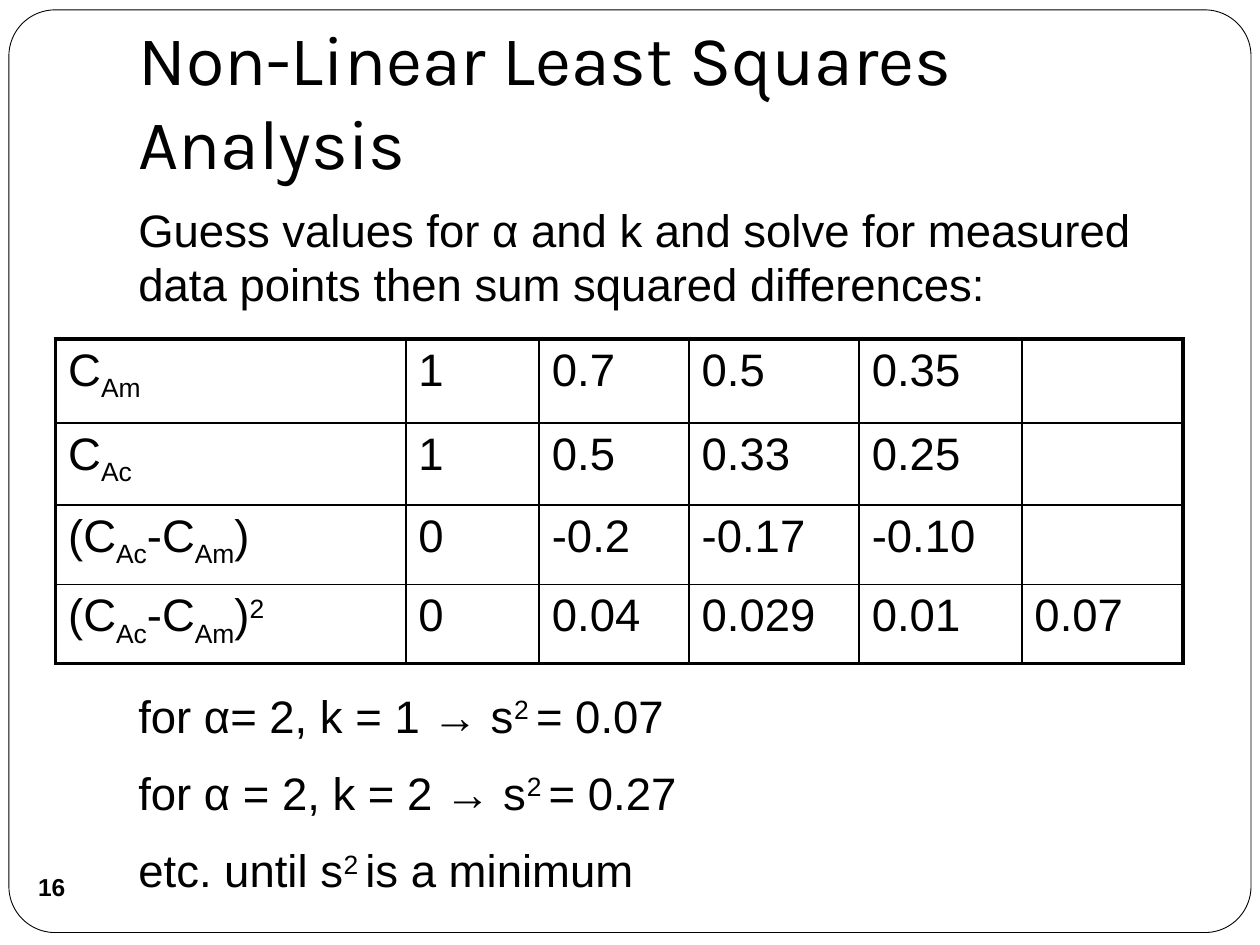
"""Build the slide on non-linear least squares analysis."""
from dataclasses import dataclass

import lxml.etree
import pptx
import pptx.dml.color
import pptx.enum.shapes
import pptx.enum.text
import pptx.oxml.ns
import pptx.util

Cm = pptx.util.Cm
Pt = pptx.util.Pt
Anchor = pptx.enum.text.MSO_ANCHOR
Align = pptx.enum.text.PP_ALIGN
Shape = pptx.enum.shapes.MSO_SHAPE


@dataclass(frozen=True)
class Theme:
    ink: str = "000000"
    paper: str = "FFFFFF"
    title_font: str = "Karla"
    body_font: str = "Arial"
    title_size: float = 40
    body_size: float = 26
    number_size: float = 14
    frame_line: float = 0.5
    inner_line: float = 1
    outer_line: float = 2.25


THEME = Theme()
BASELINES = {"_": "-25000", "^": "30000"}
COLUMN_WIDTHS = (7.06, 2.69, 3.02, 3.43, 3.28, 3.25)
ROW_HEIGHTS = (1.7, 1.65, 1.6, 1.6)
ROWS = (
    ("C|_Am", "1", "0.7", "0.5", "0.35", ""),
    ("C|_Ac", "1", "0.5", "0.33", "0.25", ""),
    ("(C|_Ac|-C|_Am|)", "0", "-0.2", "-0.17", "-0.10", ""),
    ("(C|_Ac|-C|_Am|)|^2", "0", "0.04", "0.029", "0.01", "0.07"),
)
INTRO = (
    "Guess values for α and k and solve for measured data points "
    "then sum squared differences:",
)
RESULTS = (
    "for α= 2, k = 1 → s|^2 |= 0.07",
    "for α = 2, k = 2 → s|^2 |= 0.27",
    "etc. until s|^2 |is a minimum",
)


def color(code):
    return pptx.dml.color.RGBColor.from_string(code)


def write(para, markup, size=THEME.body_size, font=THEME.body_font, before=0):
    """Write text split by | into spans, where _ lowers and ^ raises a span."""
    para.font.size = Pt(size)
    para.font.name = font
    para.font.color.rgb = color(THEME.ink)
    para.space_before = Pt(before)
    for part in filter(None, markup.split("|")):
        span = para.add_run()
        span.text = part.lstrip("_^")
        if part[0] in BASELINES:
            span.font._element.set("baseline", BASELINES[part[0]])


def add_text(page, box_place, lines, **style):
    box = page.shapes.add_textbox(*map(Cm, box_place))
    frame = box.text_frame
    frame.word_wrap = True
    for index, line in enumerate(lines):
        para = frame.add_paragraph() if index else frame.paragraphs[0]
        write(para, line, **style)
    return frame


def add_frame(page):
    box = page.shapes.add_shape(
        Shape.ROUNDED_RECTANGLE, Cm(0.18), Cm(0.2), Cm(25.04), Cm(18.6)
    )
    box.adjustments[0] = 0.05
    box.shadow.inherit = False
    box.fill.solid()
    box.fill.fore_color.rgb = color(THEME.paper)
    box.line.color.rgb = color(THEME.ink)
    box.line.width = Pt(THEME.frame_line)


def set_borders(cell, outer_sides):
    """Draw all four borders, heavier on the outer sides of the table."""
    properties = cell._tc.get_or_add_tcPr()
    qn = pptx.oxml.ns.qn
    for side in "LRTB":
        width = THEME.outer_line if side in outer_sides else THEME.inner_line
        line = lxml.etree.SubElement(properties, qn(f"a:ln{side}"), w=str(Pt(width)))
        fill = lxml.etree.SubElement(line, qn("a:solidFill"))
        lxml.etree.SubElement(fill, qn("a:srgbClr"), val=THEME.ink)


def add_data_table(page):
    last_row, last_column = len(ROWS) - 1, len(COLUMN_WIDTHS) - 1
    table = page.shapes.add_table(
        len(ROWS), len(COLUMN_WIDTHS), Cm(1.12), Cm(6.83),
        Cm(sum(COLUMN_WIDTHS)), Cm(sum(ROW_HEIGHTS)),
    ).table
    table.first_row = table.horz_banding = False
    for column, width in zip(table.columns, COLUMN_WIDTHS):
        column.width = Cm(width)
    for row, height in zip(table.rows, ROW_HEIGHTS):
        row.height = Cm(height)
    for r, values in enumerate(ROWS):
        for c, value in enumerate(values):
            cell = table.cell(r, c)
            edges = {"T": r == 0, "B": r == last_row, "L": c == 0, "R": c == last_column}
            set_borders(cell, [side for side, outer in edges.items() if outer])
            cell.fill.background()
            write(cell.text_frame.paragraphs[0], value)


def add_page_number(page, number):
    box = page.shapes.add_shape(Shape.OVAL, Cm(0.41), Cm(17.25), Cm(1.27), Cm(1.27))
    box.shadow.inherit = False
    box.fill.background()
    box.line.fill.background()
    frame = box.text_frame
    frame.margin_left = frame.margin_right = frame.margin_top = frame.margin_bottom = 0
    frame.word_wrap = False
    frame.vertical_anchor = Anchor.MIDDLE
    para = frame.paragraphs[0]
    write(para, number, size=THEME.number_size)
    para.font.bold = True
    para.alignment = Align.CENTER


def main():
    deck = pptx.Presentation()
    deck.slide_width, deck.slide_height = Cm(25.4), Cm(19.05)
    page = deck.slides.add_slide(deck.slide_layouts[6])
    add_frame(page)
    add_data_table(page)
    add_text(page, (2.54, 13.74, 17.35, 4.7), RESULTS, before=THEME.body_size / 2)
    title = add_text(
        page, (2.54, 0.76, 21.59, 3.18), ["Non-Linear Least Squares Analysis"],
        size=THEME.title_size, font=THEME.title_font,
    )
    title.vertical_anchor = Anchor.BOTTOM
    title.margin_bottom = Cm(0.25)
    add_page_number(page, "16")
    add_text(page, (2.54, 3.94, 21.59, 2.49), INTRO, before=THEME.body_size / 2)
    deck.save("out.pptx")


if __name__ == "__main__":
    main()
